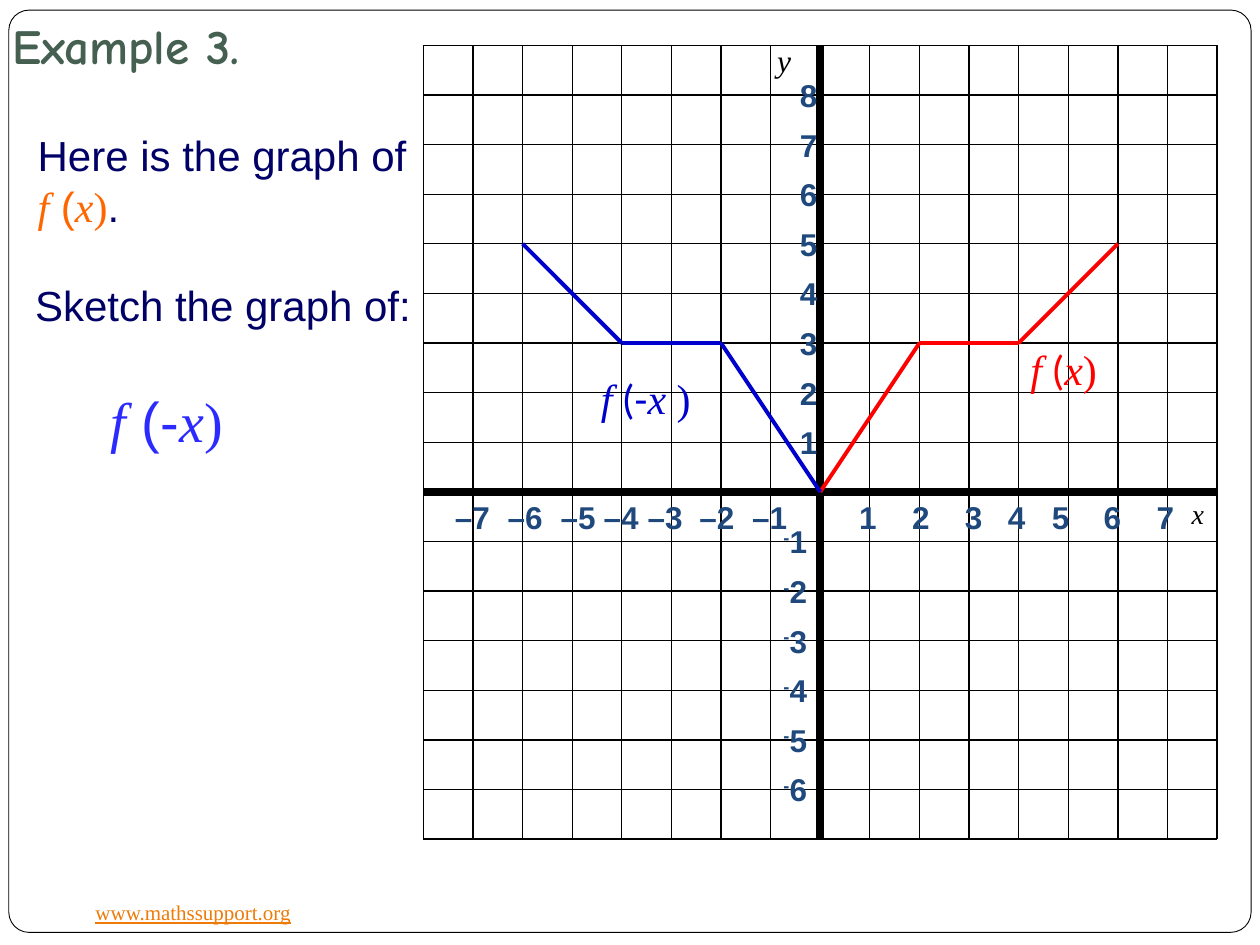
from lxml import etree
from pptx import Presentation
from pptx.dml.color import RGBColor
from pptx.enum.shapes import MSO_CONNECTOR as Connector, MSO_SHAPE as Shape
from pptx.enum.text import MSO_ANCHOR as Anchor
from pptx.oxml.ns import qn
from pptx.util import Inches, Pt

BLACK = RGBColor(0x00, 0x00, 0x00)
WHITE = RGBColor(0xFF, 0xFF, 0xFF)
GREEN = RGBColor(0x45, 0x5F, 0x51)
NAVY = RGBColor(0x01, 0x00, 0x66)
ORANGE = RGBColor(0xFF, 0x66, 0x00)
LINK_ORANGE = RGBColor(0xEE, 0x7B, 0x08)
STEEL = RGBColor(0x1F, 0x49, 0x7D)
RED = RGBColor(0xFF, 0x00, 0x00)
BLUE = RGBColor(0x00, 0x00, 0xCC)
BRIGHT_BLUE = RGBColor(0x2B, 0x2B, 0xFF)

CELLS = 16
AXIS_COLUMN, AXIS_ROW = 8, 9
TAB_STOPS = (0.41, 0.83, 1.25, 1.59, 1.94, 2.35, 2.77)


def text_format(size, name, color, **extra):
    return {"size": Pt(size), "name": name, "color": color, **extra}


BODY = text_format(24, "Arial", NAVY)
AXIS_LABEL = text_format(18, "Arial", STEEL, bold=True)


def add_run(paragraph, text, values):
    run = paragraph.add_run()
    run.text = text
    for key, value in values.items():
        if key == "color":
            run.font.color.rgb = value
        else:
            setattr(run.font, key, value)
    return run


def add_text(slide, box, runs, wrap=True):
    shape = slide.shapes.add_textbox(*map(Inches, box))
    shape.text_frame.word_wrap = wrap
    for text, values in runs:
        add_run(shape.text_frame.paragraphs[0], text, values)
    return shape


def function_runs(before, after, size, color, bracket_font):
    italic = text_format(size, "Times New Roman", color, italic=True)
    bracket = text_format(size, bracket_font, color)
    closing = text_format(size, "Times New Roman", color)
    return [("f", italic), (before, bracket), (after, italic), (")", closing)]


def add_line(slide, start, end, color, width):
    line = slide.shapes.add_connector(
        Connector.STRAIGHT, *map(Inches, (*start, *end)))
    line.line.color.rgb = color
    line.line.width = Pt(width)
    etree.SubElement(line._element.spPr, qn("a:effectLst"))


def add_polyline(slide, points, color):
    for start, end in zip(points, points[1:]):
        add_line(slide, start, end, color, 2.25)


def add_frame(slide, box):
    frame = slide.shapes.add_shape(Shape.ROUNDED_RECTANGLE, *map(Inches, box))
    frame.adjustments[0] = 0.022
    frame.shadow.inherit = False
    frame.fill.solid()
    frame.fill.fore_color.rgb = WHITE
    frame.line.color.rgb = BLACK
    frame.line.width = Pt(0.5)


def add_instructions(slide, box):
    left, top, width, height = box
    title = add_text(slide, (left, top, 2.58, 0.51), [
        ("Example 3.", text_format(28, "Comic Neue", GREEN, bold=True))])
    title.text_frame.vertical_anchor = Anchor.BOTTOM
    title.text_frame.margin_bottom = Inches(0.1)
    add_text(slide, (left + 0.2, top + 0.8, width, 0.91), [
        ("Here is the graph of ", BODY),
        *function_runs(" (", "x", 24, ORANGE, "Arial"),
        (".", BODY)])
    add_text(slide, (left + 0.18, top + 1.99, width, 0.5),
             [("Sketch the graph of:", BODY)], wrap=False)
    add_text(slide, (left + 0.78, top + 2.84, 1.1, 0.64),
             function_runs(" (-", "x", 32, BRIGHT_BLUE, "Arial"), wrap=False)
    add_text(slide, (left + 0.66, top + height, 1.77, 0.3), [
        ("www.mathssupport.org",
         text_format(12, "Times New Roman", LINK_ORANGE, underline=True))],
        wrap=False)


def add_axis_row(slide, box, labels, shift):
    shape = add_text(slide, box, [])
    paragraph = shape.text_frame.paragraphs[0]
    properties = paragraph._p.get_or_add_pPr()
    tabs = etree.SubElement(properties, qn("a:tabLst"))
    for stop in TAB_STOPS:
        etree.SubElement(tabs, qn("a:tab"),
                         pos=str(Inches(stop + shift)), algn="ctr")
    add_run(paragraph, "".join(f"\t{label}" for label in labels), AXIS_LABEL)


def add_grid(slide, box):
    left, top, width, height = box
    right, bottom = left + width, top + height
    step = width / CELLS
    axis_x, axis_y = left + AXIS_COLUMN * step, top + AXIS_ROW * step

    name_box = slide.shapes.add_textbox(
        *map(Inches, (axis_x - 0.44, top - 0.08, 0.53, 0.55)))
    name_box.fill.solid()
    name_box.fill.fore_color.rgb = WHITE
    add_run(name_box.text_frame.paragraphs[0], "y",
            text_format(18, "Times New Roman", BLACK, italic=True))

    for index in range(CELLS + 1):
        x, y = left + index * step, top + index * step
        add_line(slide, (x, top), (x, bottom), BLACK, 0.75)
        add_line(slide, (left, y), (right, y), BLACK, 0.75)
    add_line(slide, (axis_x, top), (axis_x, bottom), BLACK, 4.5)
    add_line(slide, (left, axis_y), (right, axis_y), BLACK, 4.5)

    add_text(slide, (right - 0.3, axis_y - 0.01, 0.37, 0.4), [
        ("x", text_format(16, "Times New Roman", BLACK, italic=True))])
    add_axis_row(slide, (axis_x, axis_y, 3.16, 0.4), range(1, 8), -0.13)
    add_axis_row(slide, (left - 0.12, axis_y, 3.28, 0.4),
                 [f"–{number}" for number in range(7, 0, -1)], 0)

    for number in range(1, 9):
        add_text(slide, (axis_x - 0.26, axis_y - 0.2 - number * step, 0.54, 0.4),
                 [(str(number), AXIS_LABEL)])
    for number in range(1, 7):
        label = add_text(
            slide, (axis_x - 0.39, axis_y - 0.2 + number * step, 0.54, 0.4),
            [("-", AXIS_LABEL), (str(number), AXIS_LABEL)])
        minus = label.text_frame.paragraphs[0].runs[0]
        minus._r.get_or_add_rPr().set("baseline", "30000")


def add_curves(slide, box):
    left, top, width, height = box
    step = width / CELLS
    points = [(0, 0), (2, 3), (4, 3), (6, 5)]
    for sign, color in ((1, RED), (-1, BLUE)):
        add_polyline(slide, [
            (left + (AXIS_COLUMN + sign * x) * step, top + (AXIS_ROW - y) * step)
            for x, y in points], color)
    add_text(slide, (left + 4.72, top + 2.32, 0.73, 0.5),
             function_runs(" (", "x", 24, RED, "Calibri"), wrap=False)
    add_text(slide, (left + 1.31, top + 2.55, 0.92, 0.5),
             function_runs(" (-", "x ", 24, BLUE, "Calibri"), wrap=False)


def main():
    presentation = Presentation()
    presentation.slide_width = Inches(10)
    presentation.slide_height = Inches(7.5)
    slide = presentation.slides.add_slide(presentation.slide_layouts[6])
    plot = (3.36, 0.36, 6.3, 6.3)
    add_frame(slide, (0.07, 0.08, 9.86, 7.32))
    add_instructions(slide, (0, 0.18, 3.21, 6.91))
    add_grid(slide, plot)
    add_curves(slide, plot)
    presentation.save("out.pptx")


if __name__ == "__main__":
    main()
